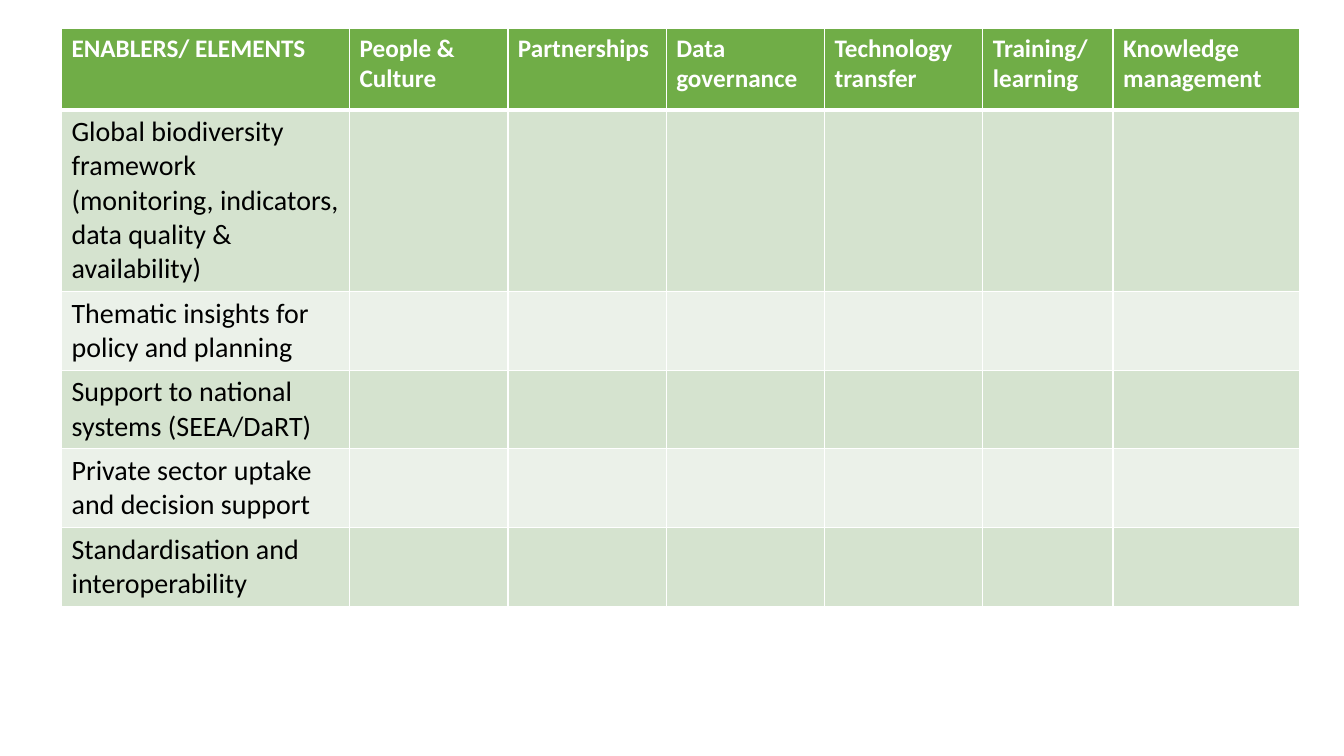
from dataclasses import dataclass

from pptx import Presentation
from pptx.dml.color import RGBColor
from pptx.oxml.ns import qn
from pptx.util import Cm, Pt
from lxml.etree import SubElement


@dataclass(frozen=True)
class Theme:
    font: str = "Calibri"
    head: str = "70AD47"
    bands: tuple = ("D5E3CF", "EBF1E9")
    white: str = "FFFFFF"
    black: str = "000000"
    head_size: int = 18
    body_size: int = 20
    thin: int = 1
    thick: int = 3


THEME = Theme()

HEADS = ["ENABLERS/ ELEMENTS", "People & Culture", "Partnerships",
         "Data governance", "Technology transfer", "Training/ learning",
         "Knowledge management"]
ITEMS = ["Global biodiversity framework (monitoring, indicators, "
         "data quality & availability)",
         "Thematic insights for policy and planning",
         "Support to national systems (SEEA/DaRT)",
         "Private sector uptake and decision support",
         "Standardisation and interoperability"]

# Table measures in centimetres
LEFT, TOP = 1.55, 0.71
WIDTHS = [7.26] + [3.99] * 4 + [3.28, 4.7]
HEIGHTS = [2.06, 4.55] + [1.97] * 4


def put_text(frame, text, size, color, bold=False):
    run = frame.paragraphs[0].add_run()
    run.text = text
    font = run.font
    font.name = THEME.font
    font.size = Pt(size)
    font.bold = bold
    font.color.rgb = RGBColor.from_string(color)


def add_edges(cell, top, bottom):
    props = cell._tc.get_or_add_tcPr()
    edges = {"L": THEME.thin, "R": THEME.thin, "T": top, "B": bottom}
    for side, width in edges.items():
        line = SubElement(props, qn(f"a:ln{side}"), w=str(Pt(width)))
        fill = SubElement(line, qn("a:solidFill"))
        SubElement(fill, qn("a:srgbClr"), val=THEME.white)


def style_cell(cell, row):
    # The thick rule lies between the header and the first item
    add_edges(cell,
              top=THEME.thick if row == 1 else THEME.thin,
              bottom=THEME.thick if row == 0 else THEME.thin)
    color = THEME.bands[(row - 1) % 2] if row else THEME.head
    cell.fill.solid()
    cell.fill.fore_color.rgb = RGBColor.from_string(color)


def add_grid(slide):
    frame = slide.shapes.add_table(
        len(HEIGHTS), len(WIDTHS), Cm(LEFT), Cm(TOP),
        Cm(sum(WIDTHS)), Cm(sum(HEIGHTS)))
    table = frame.table
    for col, width in zip(table.columns, WIDTHS):
        col.width = Cm(width)
    for row, height in zip(table.rows, HEIGHTS):
        row.height = Cm(height)
    for index, row in enumerate(table.rows):
        for cell in row.cells:
            style_cell(cell, index)
    return table


def main():
    deck = Presentation()
    deck.slide_width, deck.slide_height = Cm(33.87), Cm(19.05)
    slide = deck.slides.add_slide(deck.slide_layouts[6])
    table = add_grid(slide)

    # Header row
    for col, text in enumerate(HEADS):
        put_text(table.cell(0, col).text_frame, text,
                 size=THEME.head_size, color=THEME.white, bold=True)

    # First column
    for row, text in enumerate(ITEMS, start=1):
        put_text(table.cell(row, 0).text_frame, text,
                 size=THEME.body_size, color=THEME.black)

    deck.save("out.pptx")


if __name__ == "__main__":
    main()
